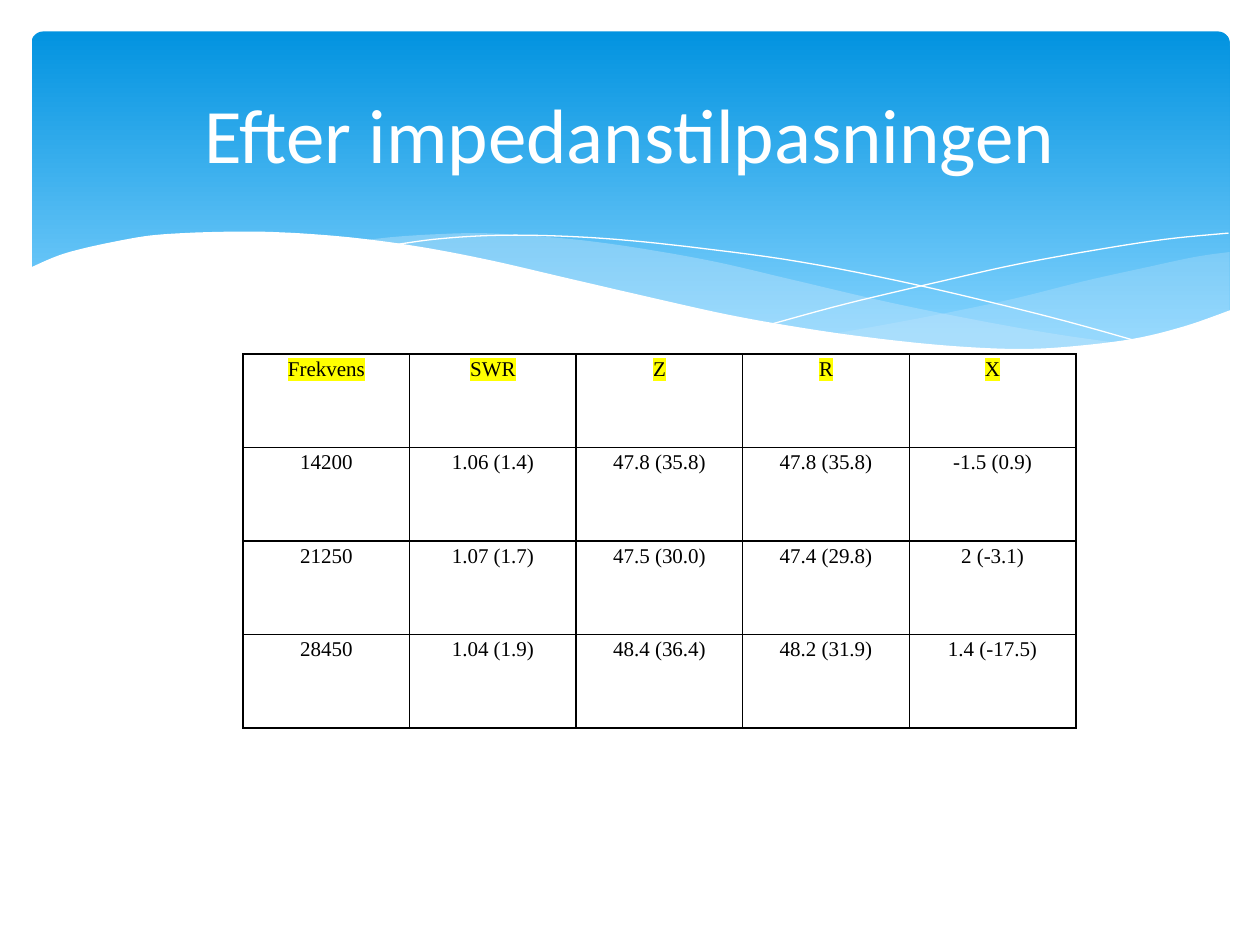
"""Build a slide with a wave banner, a title and a table of antenna readings."""
from lxml import etree
from pptx import Presentation
from pptx import util as u
from pptx.dml.color import RGBColor
from pptx.enum import shapes, text
from pptx.oxml import parse_xml
from pptx.oxml.ns import nsdecls, qn

PX = 9144
STEPS = 6
TITLE = "Efter impedanstilpasningen"
TITLE_BOX = (50, 37, 900, 137)
BANNER_BOX = (25, 25, 951, 270)
BANNER_STOPS = [(0, "0293E0"), (0.9, "83D3FE")]
TABLE_BOX = (193, 281, 661, 297)
READINGS = [
    ("Frekvens", "SWR", "Z", "R", "X"),
    ("14200", "1.06 (1.4)", "47.8 (35.8)", "47.8 (35.8)", "-1.5 (0.9)"),
    ("21250", "1.07 (1.7)", "47.5 (30.0)", "47.4 (29.8)", "2 (-3.1)"),
    ("28450", "1.04 (1.9)", "48.4 (36.4)", "48.2 (31.9)", "1.4 (-17.5)"),
]
WAVES = [
    {"fill": "C6E7FC", "alpha": 29, "edges": [
        [(976, 200), (948, 204), (906, 213), (861, 223), (805, 237), (753, 248), (706, 257), (661, 265)],
        [(661, 265), (705, 271), (757, 276), (803, 278), (854, 276), (897, 270), (935, 262), (976, 247)]]},
    {"fill": "C6E7FC", "alpha": 40, "edges": [
        [(893, 273), (837, 265), (775, 254), (706, 240), (629, 222), (569, 208), (514, 198),
         (465, 191), (420, 187), (380, 185), (344, 186), (313, 188), (286, 191)],
        [(286, 191), (342, 199), (404, 211), (449, 222), (530, 240), (601, 255), (665, 266),
         (722, 274), (773, 277), (818, 278), (857, 277), (893, 273)]]},
    {"line": "FFFFFF", "edges": [
        [(309, 195), (344, 190), (387, 187), (433, 187), (489, 190), (556, 197), (636, 208),
         (727, 226), (831, 251), (907, 272)]]},
    {"line": "FFFFFF", "edges": [
        [(613, 257), (672, 241), (748, 223), (806, 210), (866, 199), (924, 190), (975, 185)]]},
    {"fill": "FFFFFF", "edges": [
        [(977, 246), (940, 259), (899, 269), (850, 275), (809, 277), (761, 275), (708, 270),
         (648, 262), (579, 250), (503, 233), (447, 220), (391, 207), (340, 197), (292, 190),
         (250, 186), (211, 184), (177, 184), (146, 185), (119, 187), (95, 191), (67, 197),
         (46, 203), (23, 213)],
        [(23, 329), (977, 329)]]},
]


def color(value):
    return RGBColor.from_string(value)


def px(values):
    return [round(value * PX) for value in values]


def apply(target, values):
    for name, value in values.items():
        setattr(target, name, value)


def smooth(knots):
    """Sample a Catmull-Rom curve through the knots."""
    if len(knots) == 2:
        return knots
    padded = [knots[0], *knots, knots[-1]]
    points = [knots[0]]
    for a, b, c, d in zip(padded, padded[1:], padded[2:], padded[3:]):
        for step in range(1, STEPS + 1):
            t = step / STEPS
            points.append(tuple(
                q + t / 2 * (r - p + t * (2 * p - 5 * q + 4 * r - s + t * (3 * (q - r) + s - p)))
                for p, q, r, s in zip(a, b, c, d)))
    return points


def add_banner(slide):
    banner = slide.shapes.add_shape(shapes.MSO_SHAPE.ROUNDED_RECTANGLE, *px(BANNER_BOX))
    banner.adjustments[0] = 0.034
    banner.shadow.inherit = False
    banner.line.fill.background()
    banner.fill.gradient()
    banner.fill.gradient_angle = 270
    for stop, (position, value) in zip(banner.fill.gradient_stops, BANNER_STOPS):
        stop.position = position
        stop.color.rgb = color(value)


def add_wave(slide, wave):
    start, *rest = [px(point) for edge in wave["edges"] for point in smooth(edge)]
    builder = slide.shapes.build_freeform(*start, scale=1.0)
    builder.add_line_segments(rest, close="fill" in wave)
    shape = builder.convert_to_shape()
    shape.shadow.inherit = False
    if "line" in wave:
        shape.fill.background()
        shape.line.color.rgb = color(wave["line"])
        shape.line.width = u.Pt(0)
        return
    shape.line.fill.background()
    shape.fill.solid()
    shape.fill.fore_color.rgb = color(wave["fill"])
    if "alpha" in wave:
        fill = shape.fill._xPr.find(qn("a:solidFill"))
        etree.SubElement(fill[0], qn("a:alpha"), val=str(wave["alpha"] * 1000))


def write(frame, words, font, paragraph_format):
    paragraph = frame.paragraphs[0]
    apply(paragraph, paragraph_format)
    run = paragraph.add_run()
    run.text = words
    run.font.color.rgb = color(font["color"])
    apply(run.font, {"name": font["name"], "size": u.Pt(font["size"])})
    return run


def add_borders(cell):
    for index, side in enumerate("LRTB"):
        cell._tc.get_or_add_tcPr().insert(index, parse_xml(
            f'<a:ln{side} {nsdecls("a")} w="12700"><a:solidFill>'
            f'<a:srgbClr val="000000"/></a:solidFill></a:ln{side}>'))


def highlight(run):
    run.font._rPr.find(qn("a:solidFill")).addnext(parse_xml(
        f'<a:highlight {nsdecls("a")}><a:srgbClr val="FFFF00"/></a:highlight>'))


def add_readings(slide):
    columns, rows = len(READINGS[0]), len(READINGS)
    left, top, width, height = px(TABLE_BOX)
    table = slide.shapes.add_table(rows, columns, left, top, width, height).table
    apply(table, {"first_row": False, "horz_banding": False})
    font = {"name": "Times New Roman", "size": 12, "color": "000000"}
    centred = {"alignment": text.PP_ALIGN.CENTER, "line_spacing": 1.15}
    margins = {"margin_left": 7 * PX, "margin_right": 7 * PX, "margin_top": 0, "margin_bottom": 0}
    for r, row in enumerate(READINGS):
        for c, words in enumerate(row):
            cell = table.cell(r, c)
            apply(cell, margins)
            cell.fill.background()
            add_borders(cell)
            run = write(cell.text_frame, words, font, centred)
            if r == 0:
                highlight(run)


def add_title(slide):
    title = slide.shapes.title
    apply(title, dict(zip(("left", "top", "width", "height"), px(TITLE_BOX))))
    title.text_frame.vertical_anchor = text.MSO_ANCHOR.MIDDLE
    write(title.text_frame, TITLE, {"name": "Calibri", "size": 44, "color": "FFFFFF"},
          {"alignment": text.PP_ALIGN.CENTER})
    slide.shapes._spTree.append(title._element)


def main():
    presentation = Presentation()
    apply(presentation, {"slide_width": 1000 * PX, "slide_height": 750 * PX})
    slide = presentation.slides.add_slide(presentation.slide_layouts[5])
    add_banner(slide)
    for wave in WAVES:
        add_wave(slide, wave)
    add_readings(slide)
    add_title(slide)
    presentation.save("out.pptx")


if __name__ == "__main__":
    main()
